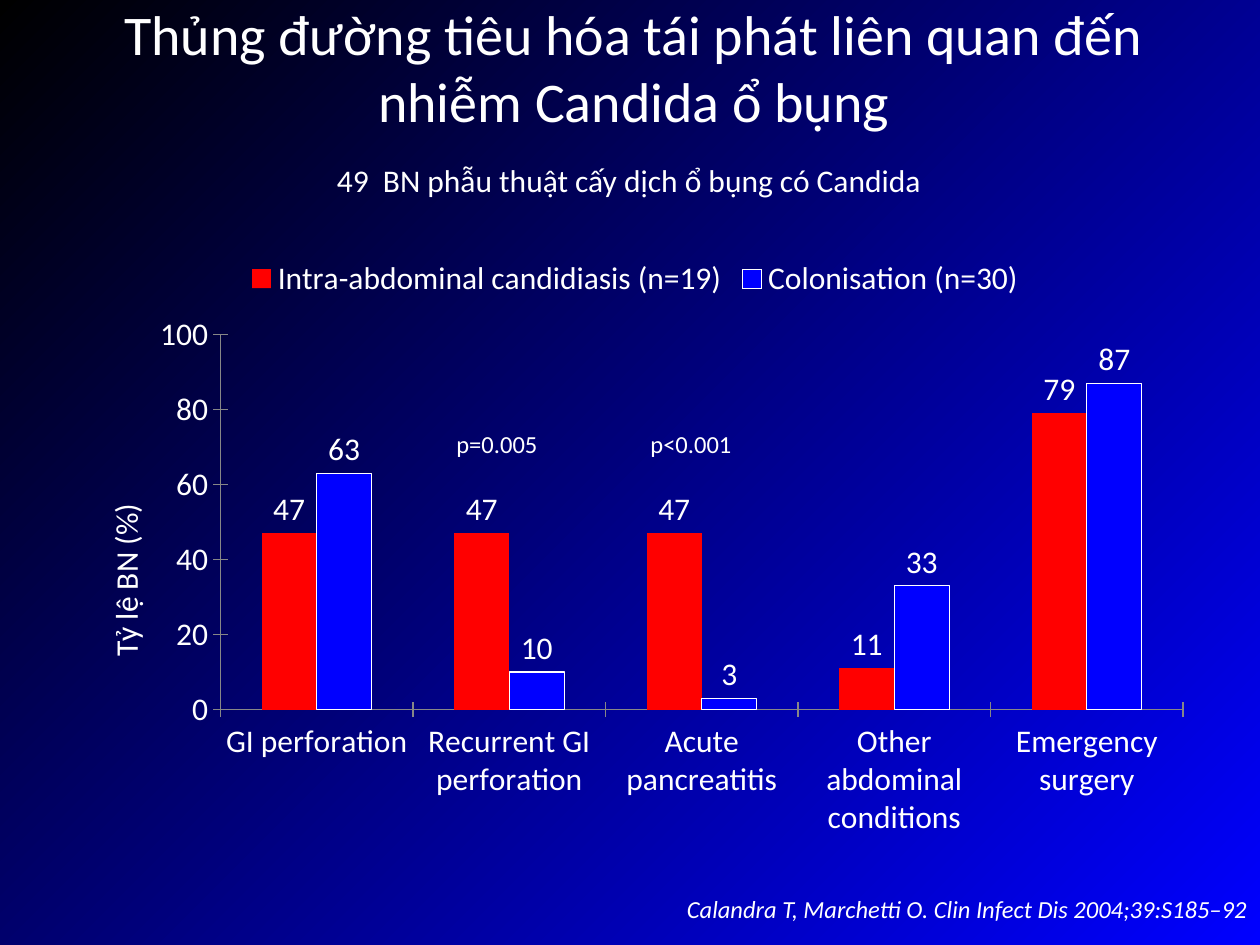
from lxml.etree import SubElement
from pptx import Presentation
from pptx.chart.data import CategoryChartData
from pptx.dml.color import RGBColor
from pptx.enum.chart import XL_CHART_TYPE, XL_LABEL_POSITION, XL_LEGEND_POSITION, XL_TICK_MARK
from pptx.enum.text import MSO_ANCHOR, PP_ALIGN
from pptx.oxml import parse_xml
from pptx.oxml.ns import qn
from pptx.util import Pt

PX = 914400 / 126
FONT = "Calibri"
WHITE, GREY, RED, BLUE, BLACK = "FFFFFF", "878787", "FF0000", "0000FF", "000000"
CATEGORIES = ["GI perforation", "Recurrent GI perforation", "Acute pancreatitis",
              "Other abdominal conditions", "Emergency surgery"]
SERIES = [("Intra-abdominal candidiasis (n=19)", [47, 47, 47, 11, 79], RED, None),
          ("Colonisation (n=30)", [63, 10, 3, 33, 87], BLUE, WHITE)]


def px(length):
    """Turn px into EMU."""
    return round(length * PX)


def color(value):
    """Turn a hex string into a colour."""
    return RGBColor.from_string(value)


def style_font(font, size, italic=False):
    """Give a font the slide's typeface and white colour."""
    font.name = FONT
    font.size = Pt(size)
    font.bold = False
    font.italic = italic
    font.color.rgb = color(WHITE)


def paint_background(slide):
    """Fill the background with a radial gradient from the bottom right corner."""
    fill = slide.background.fill
    fill.gradient()
    for stop, position, value in zip(fill.gradient_stops, (0, 1), (BLUE, BLACK)):
        stop.position = position
        stop.color.rgb = color(value)
    gradient = next(slide.element.iter(qn("a:gradFill")))
    gradient.remove(gradient.find(qn("a:lin")))
    path = SubElement(gradient, qn("a:path"), path="circle")
    SubElement(path, qn("a:fillToRect"), l="100000", t="100000")


def add_text(slide, box, text, size, align=PP_ALIGN.LEFT, anchor=MSO_ANCHOR.TOP,
             inset=None, italic=False, wrap=True):
    """Place one paragraph of text in a box."""
    frame = slide.shapes.add_textbox(*map(px, box)).text_frame
    frame.word_wrap = wrap
    frame.vertical_anchor = anchor
    if inset is not None:
        frame.margin_left = frame.margin_right = px(inset)
        frame.margin_top = frame.margin_bottom = px(inset)
    frame.text = text
    paragraph = frame.paragraphs[0]
    paragraph.alignment = align
    style_font(paragraph.runs[0].font, size, italic)


def set_layout(parent, successor, **fractions):
    """Pin a chart part at fractions of the chart area."""
    for old in parent.findall(qn("c:layout")):
        parent.remove(old)
    layout = parse_xml('<c:layout xmlns:c="http://schemas.openxmlformats.org/'
                       'drawingml/2006/chart"><c:manualLayout/></c:layout>')
    manual = layout[0]
    if "w" in fractions:
        SubElement(manual, qn("c:layoutTarget"), val="inner")
    for name in ("x", "y"):
        SubElement(manual, qn(f"c:{name}Mode"), val="edge")
    for name, value in fractions.items():
        SubElement(manual, qn(f"c:{name}"), val=str(value))
    parent.find(qn(successor)).addprevious(layout)


def style_axis(axis):
    """Give an axis crossing ticks, a grey line and white labels."""
    axis.has_major_gridlines = False
    axis.major_tick_mark = XL_TICK_MARK.CROSS
    axis.minor_tick_mark = XL_TICK_MARK.NONE
    axis.format.line.color.rgb = color(GREY)
    axis.format.line.width = Pt(0.75)
    style_font(axis.tick_labels.font, 18)


def style_series(series, fill, outline):
    """Colour a series and show its values above the bars."""
    series.format.fill.solid()
    series.format.fill.fore_color.rgb = color(fill)
    if outline:
        series.format.line.color.rgb = color(outline)
        series.format.line.width = Pt(0.75)
    else:
        series.format.line.fill.background()
    labels = series.data_labels
    labels.show_value = True
    labels.position = XL_LABEL_POSITION.OUTSIDE_END
    style_font(labels.font, 18)


def add_patient_chart(slide, box):
    """Place the clustered column chart of patient shares."""
    data = CategoryChartData()
    data.categories = CATEGORIES
    for name, values, *_ in SERIES:
        data.add_series(name, values)
    chart = slide.shapes.add_chart(
        XL_CHART_TYPE.COLUMN_CLUSTERED, *map(px, box), data).chart
    style_font(chart.font, 18)
    chart.has_title = False
    chart.has_legend = True
    chart.legend.position = XL_LEGEND_POSITION.TOP
    chart.legend.include_in_layout = False
    style_font(chart.legend.font, 18)

    plot = chart.plots[0]
    plot.gap_width = 150
    plot.overlap = 0
    plot.vary_by_categories = False
    for series, (_, _, fill, outline) in zip(plot.series, SERIES):
        style_series(series, fill, outline)

    value_axis = chart.value_axis
    for axis in (chart.category_axis, value_axis):
        style_axis(axis)
    value_axis.minimum_scale = 0
    value_axis.maximum_scale = 100
    value_axis.major_unit = 20
    title = value_axis.axis_title
    title.text_frame.text = "Tỷ lệ BN (%)"
    style_font(title.text_frame.paragraphs[0].runs[0].font, 18)
    next(title.text_frame._txBody.iter(qn("a:bodyPr"))).set("rot", "-5400000")
    set_layout(value_axis.axis_title._element, "c:overlay", x=0.03, y=0.42)
    plot_area = next(chart.element.iter(qn("c:plotArea")))
    set_layout(plot_area, "c:barChart", x=0.137, y=0.15, w=0.843, h=0.62)


def build_slide(presentation):
    """Build the slide on recurrent perforation and Candida."""
    slide = presentation.slides.add_slide(presentation.slide_layouts[6])
    paint_background(slide)
    add_text(slide, (67, 33, 1134, 101),
             "Thủng đường tiêu hóa tái phát liên quan đến nhiễm Candida ổ bụng",
             32, PP_ALIGN.CENTER, MSO_ANCHOR.BOTTOM, inset=0)
    add_patient_chart(slide, (64, 244, 1142, 605))
    add_text(slide, (228, 887, 1032, 43),
             "Calandra T, Marchetti O. Clin Infect Dis 2004;39:S185–92",
             14, PP_ALIGN.RIGHT, MSO_ANCHOR.BOTTOM, italic=True)
    add_text(slide, (123, 155, 1012, 50),
             "49  BN phẫu thuật cấy dịch ổ bụng có Candida", 18, PP_ALIGN.CENTER)
    for left, text in ((444, "p=0.005"), (638, "p<0.001")):
        add_text(slide, (left, 423, 107, 43), text, 14, wrap=False)


def main():
    """Create and save the presentation."""
    presentation = Presentation()
    presentation.slide_width = px(1260)
    presentation.slide_height = px(945)
    build_slide(presentation)
    presentation.save("out.pptx")


if __name__ == "__main__":
    main()
